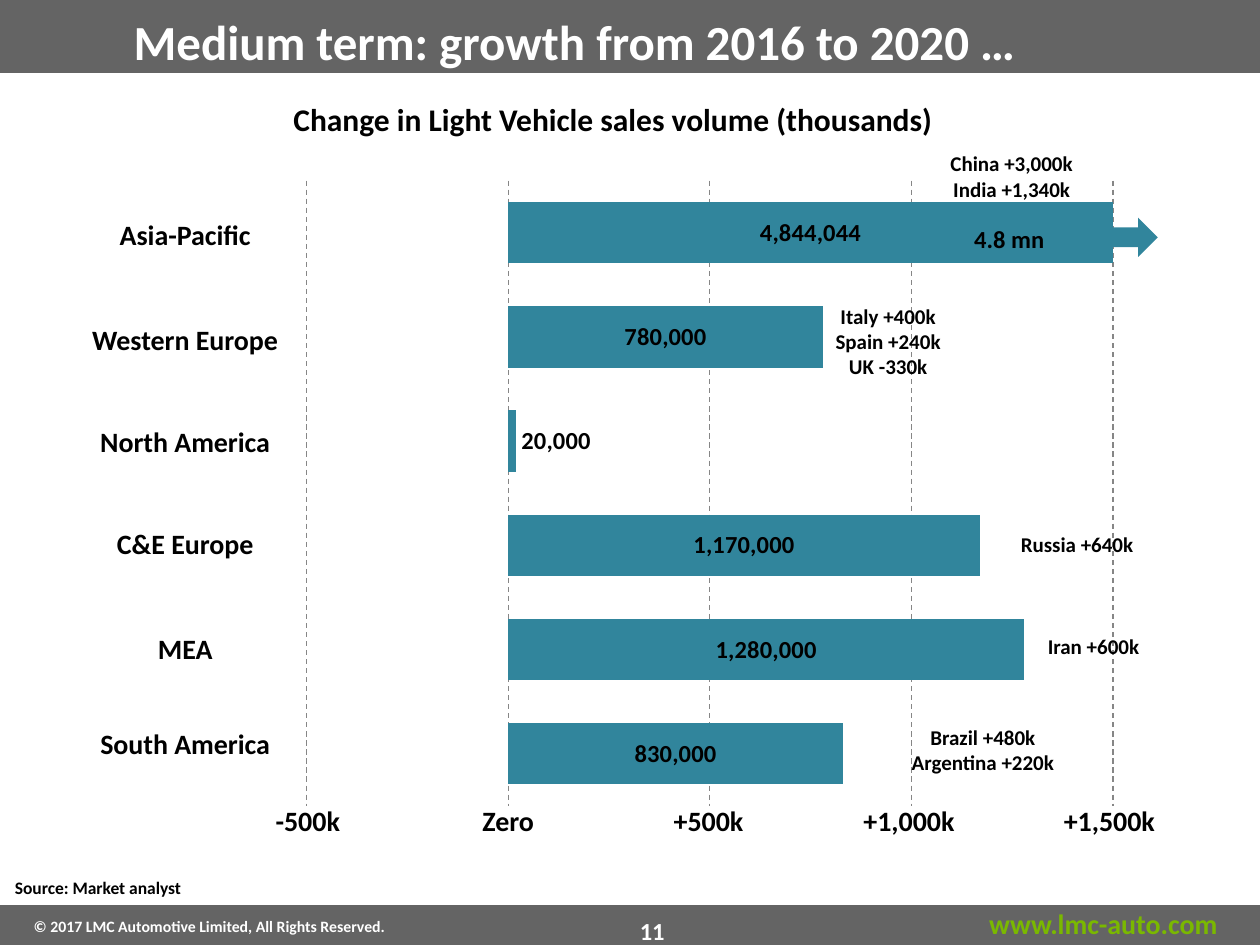
from pptx import Presentation
from pptx.chart.data import CategoryChartData
from pptx.dml.color import RGBColor
from pptx.enum.chart import XL_CHART_TYPE, XL_LABEL_POSITION
from pptx.enum.dml import MSO_LINE
from pptx.enum.shapes import MSO_SHAPE
from pptx.enum.text import MSO_ANCHOR, MSO_AUTO_SIZE, PP_ALIGN
from pptx.oxml import parse_xml
from pptx.oxml.ns import nsdecls
from pptx.util import Cm, Pt

COLORS = {
    name: RGBColor.from_string(value)
    for name, value in {
        "band": "646464", "teal": "31859C", "green": "7AB800",
        "black": "000000", "white": "FFFFFF", "grid": "868686",
    }.items()
}
FONT = "Calibri"
LABEL_WIDTH = 4.37


def add_block(kind, left, top, width, height, color):
    shape = slide.shapes.add_shape(kind, Cm(left), Cm(top), Cm(width), Cm(height))
    shape.shadow.inherit = False
    shape.fill.solid()
    shape.fill.fore_color.rgb = COLORS[color]
    shape.line.fill.background()
    return shape


def write_text(shape, lines, size, color="black", align=PP_ALIGN.CENTER):
    frame = shape.text_frame
    frame.word_wrap = True
    frame.auto_size = MSO_AUTO_SIZE.NONE
    frame.vertical_anchor = MSO_ANCHOR.TOP
    for index, line in enumerate(lines):
        paragraph = frame.add_paragraph() if index else frame.paragraphs[0]
        paragraph.alignment = align
        run = paragraph.add_run()
        run.text = line
        run.font.name = FONT
        run.font.size = Pt(size)
        run.font.bold = True
        run.font.color.rgb = COLORS[color]


presentation = Presentation()
presentation.slide_width = Cm(25.4)
presentation.slide_height = Cm(19.05)
slide = presentation.slides.add_slide(presentation.slide_layouts[5])

# Header and footer bands, placed behind the title
header = add_block(MSO_SHAPE.RECTANGLE, 0, 0, 25.4, 1.47, "band")
footer = add_block(MSO_SHAPE.RECTANGLE, 0, 18.29, 25.4, 0.81, "band")
footer.line.color.rgb = COLORS["band"]
footer.line.width = Pt(2)
for band in (footer, header):
    slide.shapes._spTree.insert(2, band._element)

# Title
title = slide.shapes.title
title.left, title.top, title.width, title.height = Cm(2.44), Cm(0.1), Cm(22.38), Cm(1.45)
write_text(title, ["Medium term: growth from 2016 to 2020 …"], 28, "white", PP_ALIGN.LEFT)

# Chart heading, source and footer texts
for text, left, top, width, height, size, color, align in [
    ("www.lmc-auto.com", 19.35, 18.16, 5.79, 0.94, 16, "green", PP_ALIGN.CENTER),
    ("© 2017 LMC Automotive Limited, All Rights Reserved.",
     0.43, 18.36, 9.12, 0.64, 9, "white", PP_ALIGN.LEFT),
    ("11", 8.59, 18.34, 9.12, 0.84, 14, "white", PP_ALIGN.CENTER),
    ("Change in Light Vehicle sales volume (thousands)",
     2.11, 1.9, 20.5, 1.02, 18, "black", PP_ALIGN.CENTER),
    ("Source: Market analyst", 0.05, 17.55, 9.07, 0.69, 10, "black", PP_ALIGN.LEFT),
]:
    box = slide.shapes.add_textbox(Cm(left), Cm(top), Cm(width), Cm(height))
    write_text(box, [text], size, color, align)

# Bar chart
chart_data = CategoryChartData(number_format="#,##0")
chart_data.categories = ["1", "2", "3", "4", "5", "6"]
chart_data.add_series("Series 1", [830000, 1280000, 1170000, 20000, 780000, 4844044])
chart = slide.shapes.add_chart(
    XL_CHART_TYPE.BAR_CLUSTERED, Cm(1.7), Cm(3.38), Cm(21.16), Cm(13.13), chart_data
).chart
chart.has_title = False
chart.has_legend = False
chart.font.name = FONT
chart.font.size = Pt(18)
chart.font.color.rgb = COLORS["black"]

chart.category_axis.visible = False
value_axis = chart.value_axis
value_axis.visible = False
value_axis.minimum_scale = -1000000
value_axis.maximum_scale = 1500000
value_axis.major_unit = 500000
value_axis.has_major_gridlines = True
gridline = value_axis.major_gridlines.format.line
gridline.color.rgb = COLORS["grid"]
gridline.width = Pt(0.75)
gridline.dash_style = MSO_LINE.DASH

plot = chart.plots[0]
plot.gap_width = 70
plot.vary_by_categories = False
series = plot.series[0]
series.invert_if_negative = False
series.format.fill.solid()
series.format.fill.fore_color.rgb = COLORS["teal"]

# Value labels: centred, except on the short North America bar
labels = series.data_labels
labels.show_value = True
labels.number_format = "#,##0"
labels.number_format_is_linked = False
labels.position = XL_LABEL_POSITION.CENTER
short_label = series.points[3].data_label
short_label.position = XL_LABEL_POSITION.OUTSIDE_END
for label in (labels, short_label):
    label.font.name = FONT
    label.font.size = Pt(14)
    label.font.bold = True
    label.font.color.rgb = COLORS["black"]

# Fixed plot area, so that the gridlines meet the axis labels
plot_area = chart._chartSpace.chart.plotArea
for layout in plot_area.findall("{*}layout"):
    plot_area.remove(layout)
plot_area.insert(0, parse_xml(
    f'<c:layout {nsdecls("c")}><c:manualLayout><c:layoutTarget val="inner"/>'
    '<c:xMode val="edge"/><c:yMode val="edge"/><c:x val="0.02"/><c:y val="0.02"/>'
    '<c:w val="0.96"/><c:h val="0.96"/></c:manualLayout></c:layout>'
))

# Mask over the leftmost gridline, then the region names
add_block(MSO_SHAPE.RECTANGLE, 1.55, 3.18, 1.19, 13.34, "white")
for region, top in [
    ("Asia-Pacific", 4.27), ("Western Europe", 6.38), ("North America", 8.43),
    ("C&E Europe", 10.49), ("MEA", 12.6), ("South America", 14.53),
]:
    shape = add_block(MSO_SHAPE.RECTANGLE, 1.55, top, LABEL_WIDTH, 0.94, "white")
    write_text(shape, [region], 16)

# Axis labels
for index, text in enumerate(["-500k", "Zero", "+500k", "+1,000k", "+1,500k"]):
    box = slide.shapes.add_textbox(
        Cm(4.02 + 4.04 * index), Cm(16.08), Cm(LABEL_WIDTH), Cm(0.94))
    write_text(box, [text], 16)

# Arrow for the bar that runs off the scale
add_block(MSO_SHAPE.RIGHT_ARROW, 21.87, 4.39, 1.47, 0.79, "teal")

# Country notes
for lines, left, top, size in [
    (["China +3,000k", "India +1,340k"], 18.21, 2.92, 12),
    (["Italy +400k", "Spain +240k", "UK -330k"], 15.72, 5.99, 12),
    (["Russia +640k"], 19.53, 10.59, 12),
    (["Iran +600k"], 19.86, 12.65, 12),
    (["Brazil +480k", "Argentina +220k"], 17.63, 14.48, 12),
    (["4.8 mn"], 18.16, 4.39, 14),
]:
    height = 0.25 + 0.043 * size * len(lines)
    box = slide.shapes.add_textbox(Cm(left), Cm(top), Cm(LABEL_WIDTH), Cm(height))
    write_text(box, lines, size)

presentation.save("out.pptx")
